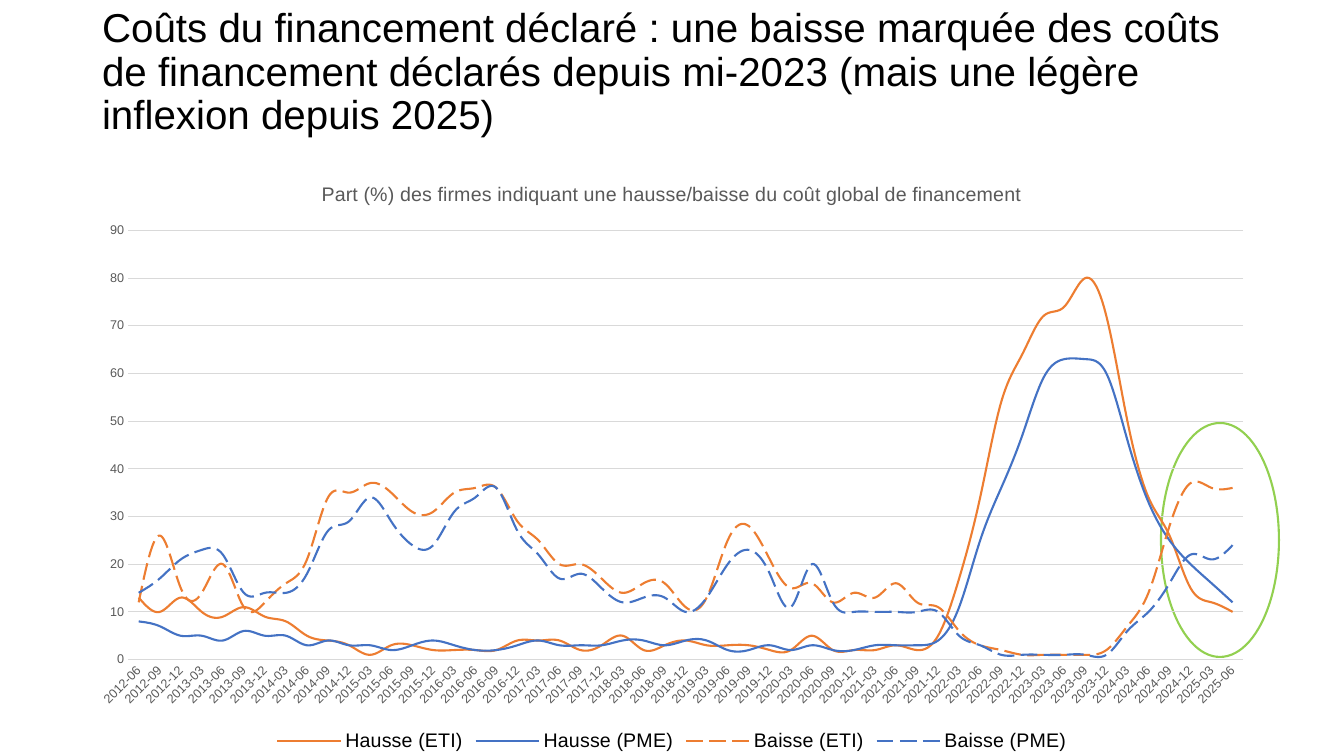
from pptx import Presentation
from pptx.chart.data import CategoryChartData
from pptx.dml.color import RGBColor
from pptx.enum.chart import XL_CHART_TYPE, XL_LEGEND_POSITION, XL_TICK_MARK
from pptx.enum.dml import MSO_LINE
from pptx.enum.shapes import MSO_SHAPE
from pptx.enum.text import MSO_ANCHOR, MSO_AUTO_SIZE, PP_ALIGN
from pptx.oxml import parse_xml
from pptx.oxml.ns import nsdecls
from pptx.util import Emu, Pt

LINE_CHART = XL_CHART_TYPE.LINE
LEGEND_BOTTOM = XL_LEGEND_POSITION.BOTTOM
NO_TICK = XL_TICK_MARK.NONE
SOLID, LONG_DASH = MSO_LINE.SOLID, MSO_LINE.LONG_DASH
OVAL = MSO_SHAPE.FLOWCHART_CONNECTOR
MIDDLE = MSO_ANCHOR.MIDDLE
NO_AUTOFIT = MSO_AUTO_SIZE.NONE
LEFT = PP_ALIGN.LEFT

FONT = "Arial"
COLORS = {"text": "000000", "muted": "595959", "grid": "D9D9D9",
          "ETI": "ED7D31", "PME": "4472C4", "highlight": "92D050"}
EMU_PER_PX = 12192000 / 1344

SERIES = [
    ("Hausse", "ETI", SOLID, [
        13, 10, 13, 10, 9, 11, 9, 8, 5, 4, 3, 1, 3, 3, 2, 2, 2, 2,
        4, 4, 4, 2, 3, 5, 2, 3, 4, 3, 3, 3, 2, 2, 5, 2, 2, 2,
        3, 2, 5, 17, 34, 54, 64, 72, 74, 80, 72, 50, 34, 26, 15, 12, 10]),
    ("Hausse", "PME", SOLID, [
        8, 7, 5, 5, 4, 6, 5, 5, 3, 4, 3, 3, 2, 3, 4, 3, 2, 2,
        3, 4, 3, 3, 3, 4, 4, 3, 4, 4, 2, 2, 3, 2, 3, 2, 2, 3,
        3, 3, 4, 11, 25, 36, 47, 59, 63, 63, 60, 46, 33, 25, 20, 16, 12]),
    ("Baisse", "ETI", LONG_DASH, [
        12, 26, 15, 14, 20, 11, 12, 16, 21, 34, 35, 37, 35, 31, 31, 35, 36, 36,
        29, 25, 20, 20, 17, 14, 16, 16, 11, 13, 25, 28, 21, 15, 16, 12, 14, 13,
        16, 12, 11, 6, 3, 2, 1, 1, 1, 1, 2, 7, 14, 28, 37, 36, 36]),
    ("Baisse", "PME", LONG_DASH, [
        14, 17, 21, 23, 22, 14, 14, 14, 18, 27, 29, 34, 29, 24, 24, 31, 34, 36,
        27, 22, 17, 18, 15, 12, 13, 13, 10, 13, 20, 23, 18, 11, 20, 12, 10, 10,
        10, 10, 10, 5, 3, 1, 1, 1, 1, 1, 1, 6, 10, 16, 22, 21, 24]),
]


def px(*lengths):
    return [Emu(round(length * EMU_PER_PX)) for length in lengths]


def style_font(font, size, color):
    font.name = FONT
    font.size = Pt(size)
    font.bold = False
    font.color.rgb = RGBColor.from_string(COLORS[color])


presentation = Presentation()
presentation.slide_width, presentation.slide_height = px(1344, 756)
slide = presentation.slides.add_slide(presentation.slide_layouts[5])

# Title
title = slide.shapes.title
title.left, title.top, title.width, title.height = px(92, 0, 1160, 146)
title_frame = title.text_frame
title_frame.text = ("Coûts du financement déclaré : une baisse marquée des coûts "
                    "de financement déclarés depuis mi-2023 "
                    "(mais une légère inflexion depuis 2025)")
title_frame.word_wrap = True
title_frame.auto_size = NO_AUTOFIT
title_frame.vertical_anchor = MIDDLE
paragraph = title_frame.paragraphs[0]
paragraph.alignment = LEFT
paragraph.line_spacing = 0.9
style_font(paragraph.runs[0].font, 28.8, "text")

# Oval around the latest quarters
oval = slide.shapes.add_shape(OVAL, *px(1161, 423, 118, 234))
oval.shadow.inherit = False
oval.fill.background()
oval.line.color.rgb = RGBColor.from_string(COLORS["highlight"])
oval.line.width = Pt(1.5)

# Chart: one category per quarter from June 2012 to June 2025
chart_data = CategoryChartData()
chart_data.categories = [f"{year}-{month:02}" for year in range(2012, 2026)
                         for month in (3, 6, 9, 12)][1:-2]
for direction, firm_size, dash, values in SERIES:
    chart_data.add_series(f"{direction} ({firm_size})", values)
chart = slide.shapes.add_chart(LINE_CHART, *px(77, 160, 1190, 596), chart_data).chart
style_font(chart.font, 10, "text")

chart.has_title = True
chart_title = chart.chart_title.text_frame
chart_title.text = ("Part (%) des firmes indiquant une hausse/baisse "
                    "du coût global de financement")
style_font(chart_title.paragraphs[0].runs[0].font, 14, "muted")
chart.chart_title.include_in_layout = False

chart.has_legend = True
chart.legend.position = LEGEND_BOTTOM
chart.legend.include_in_layout = False
style_font(chart.legend.font, 14, "text")

chart.plots[0].vary_by_categories = False
for series, (direction, firm_size, dash, values) in zip(chart.plots[0].series, SERIES):
    series.smooth = True
    line = series.format.line
    line.color.rgb = RGBColor.from_string(COLORS[firm_size])
    line.width = Pt(1.5)
    line.dash_style = dash

category_axis, value_axis = chart.category_axis, chart.value_axis
for axis in (category_axis, value_axis):
    axis.major_tick_mark = axis.minor_tick_mark = NO_TICK
    style_font(axis.tick_labels.font, 9, "muted")
value_axis.minimum_scale, value_axis.maximum_scale = 0, 90
value_axis.major_unit = 10
value_axis.has_major_gridlines = True
value_axis.format.line.fill.background()
for line in (category_axis.format.line, value_axis.major_gridlines.format.line):
    line.color.rgb = RGBColor.from_string(COLORS["grid"])
    line.width = Pt(0.75)

# Automatic slant for the dates, and a clear chart background
chart_space = chart.element
chart_space.xpath(".//c:catAx/c:txPr/a:bodyPr")[0].set("rot", "-60000000")
chart_space.chart.addnext(parse_xml(
    f'<c:spPr {nsdecls("c", "a")}><a:noFill/><a:ln><a:noFill/></a:ln></c:spPr>'))

presentation.save("out.pptx")
